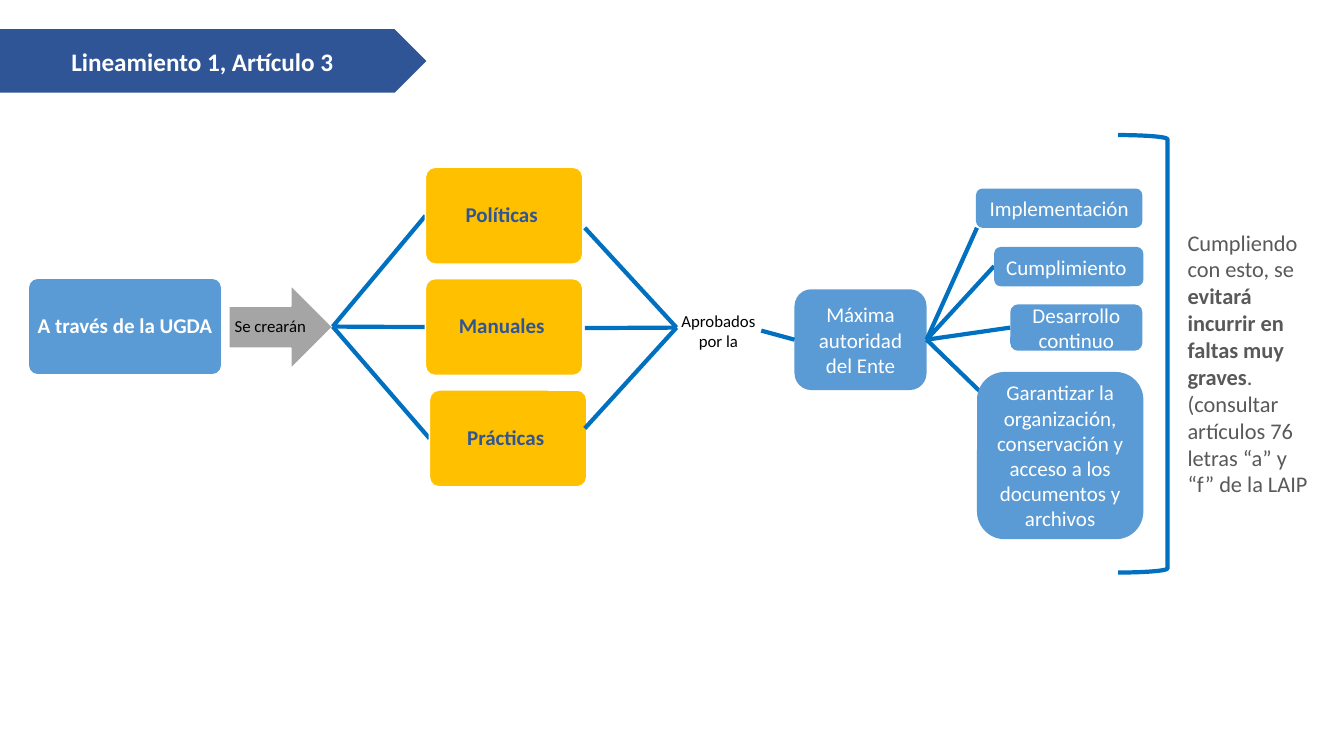
from lxml import etree
from pptx import Presentation
from pptx.dml.color import RGBColor
from pptx.enum import shapes as sh, text as tx
from pptx.oxml import ns
from pptx.util import Inches, Pt

BLUE, GOLD, GREY, NAVY = "5B9BD5", "FFC000", "A5A5A5", "2F5597"
LINE, WHITE, BLACK, DARK = "0070C0", "FFFFFF", "000000", "595959"

heading = "Lineamiento 1, Artículo 3 "
banner_at = (0, 0.29, 4.23, 0.63)
heading_at = (0, 0.29, 4.07, 0.63)

unit = ("A través de la UGDA", (0.28, 2.76, 1.92, 0.96))
creation = ("Se crearán", (2.27, 2.83, 1.03, 0.83))
instruments = [("Políticas ", 4.22), ("Manuales ", 4.22), ("Prácticas ", 4.26)]
instrument_top, instrument_step = 1.66, 1.105
instrument_width, instrument_height = 1.56, 0.96
approval = ("Aprobados por la", (6.64, 3.03, 0.97, 0.51))
authority = ("Máxima autoridad del Ente", (7.88, 2.87, 1.31, 1))
duties = [
    ("Implementación", (9.68, 1.87, 1.65, 0.39), (9.69, 2.26)),
    ("Cumplimiento ", (9.86, 2.45, 1.48, 0.39), (9.86, 2.64)),
    ("Desarrollo continuo", (10.02, 3.02, 1.31, 0.46), (10.02, 3.25)),
    ("Garantizar la organización, conservación y acceso a los documentos y archivos",
     (9.69, 3.69, 1.65, 1.66), (10.17, 4.32)),
]
bracket_at = (11.09, 1.34, 0.49, 4.34)
consequence_at = (11.68, 2.22, 1.39, 2.79)
consequence = [
    [("Cumpliendo con esto, se ", False),
     ("evitará incurrir en faltas muy graves", True), (".", False)],
    [("(consultar artículos 76 letras “a” y “f” de la LAIP", False)],
]

arrow_tip, approval_start, approval_end = (3.3, 3.24), (6.71, 3.25), (7.55, 3.28)
merge_left, merge_top, merge_step = 5.8, 2.26, 0.995


def rgb(value):
    return RGBColor.from_string(value)


def box(at):
    return [Inches(v) for v in at]


def write(shape, paragraphs, size, color, align=tx.PP_ALIGN.CENTER,
          anchor=tx.MSO_ANCHOR.MIDDLE, spacing=None, insets=(0.1, 0.05)):
    frame = shape.text_frame
    side, edge = box(insets)
    layout = {"word_wrap": True, "auto_size": tx.MSO_AUTO_SIZE.NONE,
              "vertical_anchor": anchor, "margin_left": side,
              "margin_right": side, "margin_top": edge, "margin_bottom": edge}
    for key, value in layout.items():
        setattr(frame, key, value)
    for i, runs in enumerate(paragraphs):
        paragraph = frame.add_paragraph() if i else frame.paragraphs[0]
        paragraph.alignment = align
        paragraph.line_spacing = spacing
        for words, bold in runs:
            run = paragraph.add_run()
            run.text = words
            for key, value in {"name": "Calibri", "size": Pt(size), "bold": bold}.items():
                setattr(run.font, key, value)
            run.font.color.rgb = rgb(color)


def block(kind, at, fill, outline=None):
    shape = slide.shapes.add_shape(kind, *box(at))
    shape.shadow.inherit = False
    shape.fill.solid()
    shape.fill.fore_color.rgb = rgb(fill)
    if outline:
        shape.line.color.rgb = rgb(outline)
        shape.line.width = Pt(1)
    else:
        shape.line.fill.background()
    return shape


def step(words, at, fill, color):
    shape = block(sh.MSO_SHAPE.ROUNDED_RECTANGLE, at, fill, WHITE)
    shape.adjustments[0] = 0.1
    write(shape, [[(words, True)]], 15, color, spacing=0.9, insets=(0.01, 0.01))


def link(start, end):
    line = slide.shapes.add_connector(sh.MSO_CONNECTOR.STRAIGHT, *box(start + end))
    line.line.color.rgb = rgb(LINE)
    line.line.width = Pt(3)
    etree.SubElement(line.element.spPr, ns.qn("a:effectLst"))


def duty(words, at):
    shape = block(sh.MSO_SHAPE.ROUNDED_RECTANGLE, at, BLUE)
    write(shape, [[(words, False)]], 15, WHITE)


deck = Presentation()
deck.slide_width, deck.slide_height = Inches(13.33), Inches(7.5)
slide = deck.slides.add_slide(deck.slide_layouts[5])

step(*unit, BLUE, WHITE)
arrow = block(sh.MSO_SHAPE.RIGHT_ARROW, creation[1], GREY, WHITE)
write(arrow, [[(creation[0], False)]], 12, BLACK, spacing=0.9, insets=(0.01, 0))

for i, (words, left) in enumerate(instruments):
    top = instrument_top + i * instrument_step
    link(arrow_tip, (left, top + instrument_height / 2))
    step(words, (left, top, instrument_width, instrument_height), GOLD, NAVY)
for i in range(len(instruments)):
    link((merge_left, merge_top + i * merge_step), approval_start)

approved = slide.shapes.add_textbox(*box(approval[1]))
write(approved, [[(approval[0], False)]], 12, BLACK, anchor=tx.MSO_ANCHOR.TOP)

left, top, width, height = authority[1]
middle = top + height / 2
duty(*authority)
link(approval_end, (left, middle))
for words, at, joint in duties:
    link((left + width, middle), joint)
for words, at, joint in duties:
    duty(words, at)

bracket = slide.shapes.add_shape(sh.MSO_SHAPE.RIGHT_BRACKET, *box(bracket_at))
bracket.shadow.inherit = False
bracket.fill.background()
bracket.line.color.rgb = rgb(LINE)
bracket.line.width = Pt(3)

outcome = slide.shapes.add_textbox(*box(consequence_at))
write(outcome, consequence, 16, DARK, tx.PP_ALIGN.LEFT, tx.MSO_ANCHOR.TOP)

banner = block(sh.MSO_SHAPE.PENTAGON, banner_at, NAVY)
title = slide.shapes.title
for key, value in zip(("left", "top", "width", "height"), box(heading_at)):
    setattr(title, key, value)
write(title, [[(heading, True)]], 18, WHITE)
banner.element.addnext(title.element)

deck.save("out.pptx")
